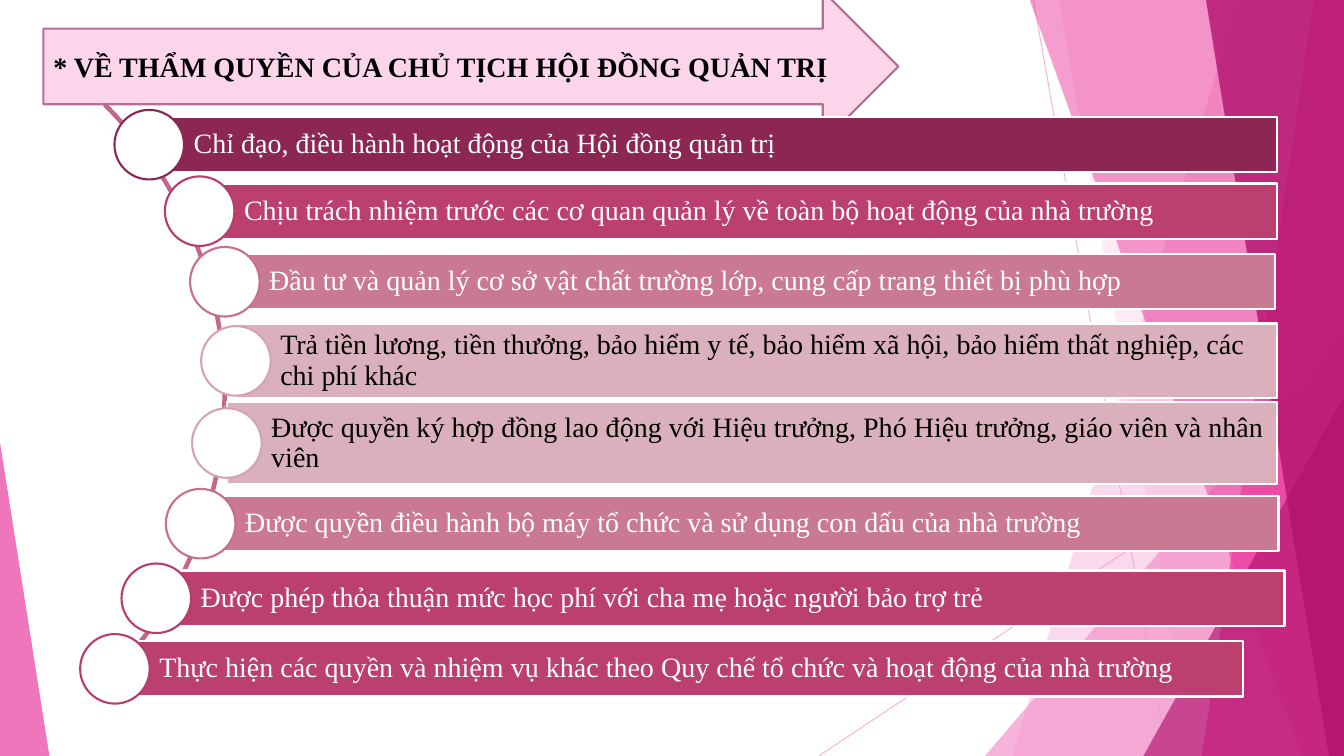
from typing import NamedTuple

from lxml import etree
from pptx import Presentation
from pptx.dml.color import RGBColor
from pptx.enum import shapes, text
from pptx.oxml import ns
from pptx.util import Inches, Pt

COLORS = {
    "white": "FFFFFF", "black": "000000",
    "light_pink": "F496CB", "pink": "EB3D9F", "magenta": "B2136D",
    "arrow": "FBD5EA", "arrow_edge": "B56F96", "arc": "C46787",
    "plum": "8B2752", "rose": "BB3F6F", "rose_edge": "B73D6D",
    "mauve": "CA7995", "mauve_edge": "C76F8E",
    "blush": "DBB0BD", "blush_edge": "D5A3B2",
}
FONT = "Times New Roman"
TOP, RIGHT, BOTTOM = -0.01, 13.33, 7.5
DOT = 0.69


class Ray(NamedTuple):
    start: tuple[float, float]
    end: tuple[float, float]


class Panel(NamedTuple):
    """Facet bounded by the right edge of the slide and a slanted left side."""
    top_x: float
    bottom_x: float
    color: str
    alpha: int


class Wedge(NamedTuple):
    left: float
    top: float
    width: float
    apex: float
    color: str
    alpha: int


class Power(NamedTuple):
    left: float
    top: float
    width: float
    height: float
    fill: str
    edge: str
    ink: str
    wording: str


RAYS = [Ray((10.25, 0), (11.58, BOTTOM)), Ray((RIGHT, 4.03), (8.12, BOTTOM))]
# Back to front; the wedges lie between the panels.
FACETS = [
    Panel(12.28, 10.04, "light_pink", 36),
    Panel(10.5, 11.83, "light_pink", 20),
    Wedge(9.77, 3.33, 3.56, 1, "light_pink", 72),
    Panel(10.21, 12.91, "pink", 50),
    Panel(13.03, 11.92, "pink", 70),
    Panel(11.96, 13.18, "magenta", 80),
    Wedge(11.34, 3.93, 1.99, 1, "magenta", 66),
    Wedge(0, 4.39, 0.49, 0, "pink", 70),
]
POWERS = [
    Power(1.48, 1.16, 11.19, 0.55, "plum", "plum", "white",
          "Chỉ đạo, điều hành hoạt động của Hội đồng quản trị"),
    Power(1.98, 1.82, 10.69, 0.55, "rose", "rose_edge", "white",
          "Chịu trách nhiệm trước các cơ quan quản lý về toàn bộ hoạt động của nhà trường"),
    Power(2.23, 2.52, 10.42, 0.55, "mauve", "mauve_edge", "white",
          "Đầu tư và quản lý cơ sở vật chất trường lớp, cung cấp trang thiết bị phù hợp"),
    Power(2.34, 3.21, 10.33, 0.74, "blush", "blush_edge", "black",
          "Trả tiền lương, tiền thưởng, bảo hiểm y tế, bảo hiểm xã hội, "
          "bảo hiểm thất nghiệp, các chi phí khác"),
    Power(2.25, 3.99, 10.42, 0.81, "blush", "blush_edge", "black",
          "Được quyền ký hợp đồng lao động với Hiệu trưởng, Phó Hiệu trưởng, "
          "giáo viên và nhân viên"),
    Power(1.99, 4.92, 10.69, 0.55, "mauve", "mauve_edge", "white",
          "Được quyền điều hành bộ máy tổ chức và sử dụng con dấu của nhà trường"),
    Power(1.55, 5.66, 11.19, 0.55, "rose", "rose_edge", "white",
          "Được phép thỏa thuận mức học phí với cha mẹ hoặc người bảo trợ trẻ"),
    Power(1.14, 6.36, 11.19, 0.55, "rose", "rose_edge", "white",
          "Thực hiện các quyền và nhiệm vụ khác theo Quy chế tổ chức và hoạt động của nhà trường"),
]


def rgb(color: str) -> RGBColor:
    return RGBColor.from_string(COLORS[color])


def set_alpha(element, percent: int) -> None:
    """Make the first solid colour under the element partly transparent."""
    color = next(element.iter(ns.qn("a:srgbClr")))
    etree.SubElement(color, ns.qn("a:alpha")).set("val", str(percent * 1000))


def paint(shape, fill: str | None = None, edge: str | None = None, alpha: int = 100) -> None:
    shape.shadow.inherit = False
    if fill:
        shape.fill.solid()
        shape.fill.fore_color.rgb = rgb(fill)
        if alpha < 100:
            set_alpha(shape.fill._xPr, alpha)
    else:
        shape.fill.background()
    if edge:
        shape.line.color.rgb = rgb(edge)
        shape.line.width = Pt(1.5)
    else:
        shape.line.fill.background()


def add_preset(slide, kind, left: float, top: float, width: float, height: float):
    return slide.shapes.add_shape(kind, *map(Inches, (left, top, width, height)))


def write(shape, wording: str, *, color: str, bold: bool = False, spacing: float = 1.0,
          insets: tuple[float, float, float, float] = (0.1, 0.05, 0.1, 0.05)) -> None:
    frame = shape.text_frame
    frame.word_wrap = True
    frame.vertical_anchor = text.MSO_ANCHOR.MIDDLE
    frame.margin_left, frame.margin_top, frame.margin_right, frame.margin_bottom = map(
        Inches, insets)
    paragraph = frame.paragraphs[0]
    paragraph.alignment = text.PP_ALIGN.LEFT
    paragraph.line_spacing = spacing
    run = paragraph.add_run()
    run.text = wording
    run.font.name, run.font.size, run.font.bold = FONT, Pt(20), bold
    run.font.color.rgb = rgb(color)


def draw_ray(slide, ray: Ray) -> None:
    line = slide.shapes.add_connector(
        shapes.MSO_CONNECTOR.STRAIGHT, *map(Inches, ray.start + ray.end))
    line.line.color.rgb = rgb("light_pink")
    line.line.width = Pt(0.75)
    properties = line._element.spPr
    set_alpha(properties, 70)
    etree.SubElement(properties, ns.qn("a:effectLst"))


def draw_facet(slide, facet: Panel | Wedge) -> None:
    if isinstance(facet, Panel):
        outline = [(facet.top_x, TOP), (RIGHT, TOP), (RIGHT, BOTTOM), (facet.bottom_x, BOTTOM)]
        points = [(Inches(x), Inches(y)) for x, y in outline]
        builder = slide.shapes.build_freeform(*points[0])
        builder.add_line_segments(points[1:], close=True)
        shape = builder.convert_to_shape()
    else:
        shape = add_preset(slide, shapes.MSO_SHAPE.ISOSCELES_TRIANGLE,
                           facet.left, facet.top, facet.width, BOTTOM - facet.top)
        shape.adjustments[0] = facet.apex
    paint(shape, facet.color, alpha=facet.alpha)


def draw_power(slide, power: Power) -> None:
    """Draw a bar and the dot centred on its left side."""
    bar = add_preset(slide, shapes.MSO_SHAPE.RECTANGLE,
                     power.left, power.top, power.width, power.height)
    paint(bar, power.fill, "white")
    write(bar, power.wording, color=power.ink, spacing=0.9, insets=(0.44, 0.06, 0.06, 0.06))
    dot = add_preset(slide, shapes.MSO_SHAPE.OVAL, power.left - DOT / 2,
                     power.top + (power.height - DOT) / 2, DOT, DOT)
    paint(dot, "white", power.edge)


def main() -> None:
    deck = Presentation()
    deck.slide_width, deck.slide_height = Inches(RIGHT), Inches(BOTTOM)
    slide = deck.slides.add_slide(deck.slide_layouts[6])
    for ray in RAYS:
        draw_ray(slide, ray)
    for facet in FACETS:
        draw_facet(slide, facet)

    heading = add_preset(slide, shapes.MSO_SHAPE.RIGHT_ARROW, 0.43, -0.09, 8.48, 1.5)
    paint(heading, "arrow", "arrow_edge")
    write(heading, "* VỀ THẨM QUYỀN CỦA CHỦ TỊCH HỘI ĐỒNG QUẢN TRỊ", color="black", bold=True)

    arc = add_preset(slide, shapes.MSO_SHAPE.BLOCK_ARC, -5.89, -0.16, 8.13, 8.13)
    for index, value in enumerate((189, 27, 0.003)):
        arc.adjustments[index] = value
    paint(arc, edge="arc")

    for power in POWERS:
        draw_power(slide, power)
    deck.save("out.pptx")


if __name__ == "__main__":
    main()
